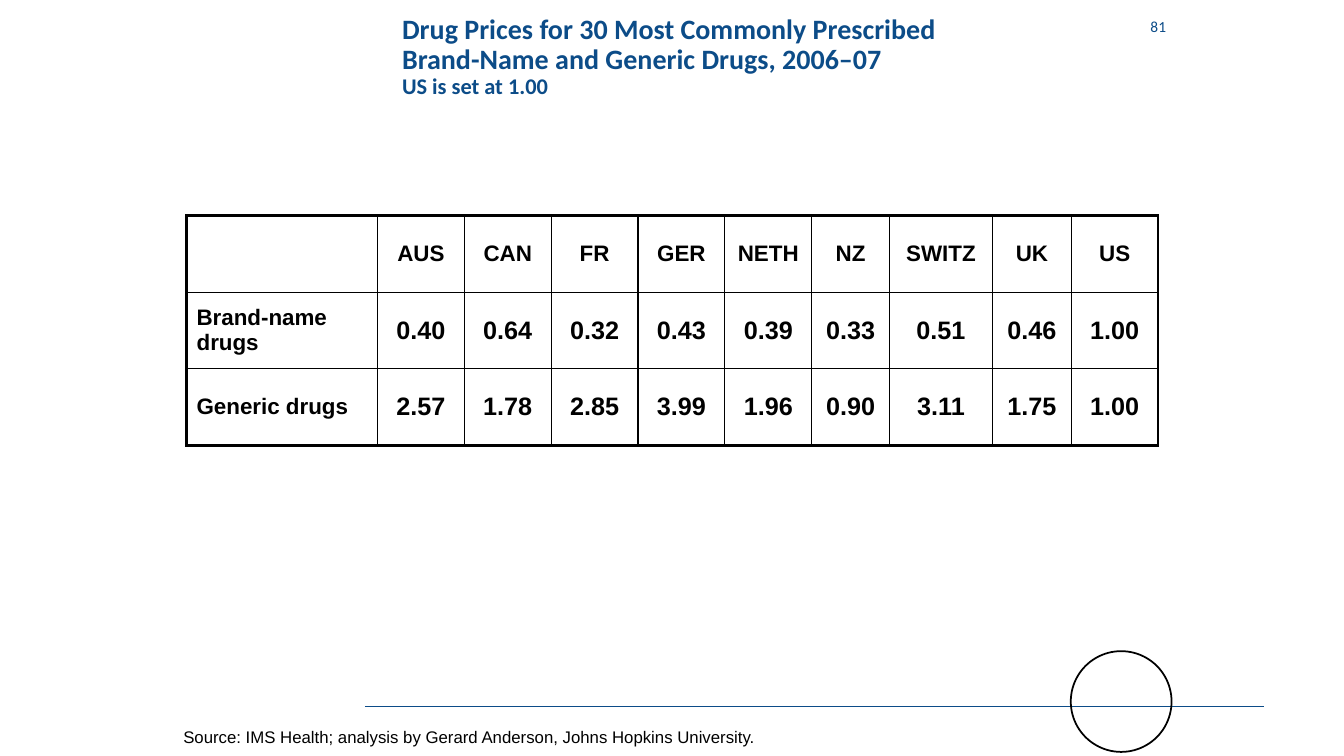
import pptx
import pptx.util
import pptx.dml.color
import pptx.enum.shapes
import pptx.enum.text
import pptx.oxml.ns
import lxml.etree

WIDE, HIGH = 13.33, 7.5
BLUE, BLACK = "0C4C88", "000000"
ALIGN = pptx.enum.text.PP_ALIGN
ANCHOR = pptx.enum.text.MSO_ANCHOR

# Column widths as parts of the table's width
PARTS = [189, 86, 86, 86, 86, 86, 77, 102, 78, 86]
ROWS = [
    ["", "AUS", "CAN", "FR", "GER", "NETH", "NZ", "SWITZ", "UK", "US"],
    ["Brand-name drugs", "0.40", "0.64", "0.32", "0.43", "0.39", "0.33",
     "0.51", "0.46", "1.00"],
    ["Generic drugs", "2.57", "1.78", "2.85", "3.99", "1.96", "0.90",
     "3.11", "1.75", "1.00"],
]


def color(code):
    return pptx.dml.color.RGBColor.from_string(code)


def across(share):
    """Percent of the slide's width."""
    return pptx.util.Inches(WIDE * share / 100)


def down(share):
    """Percent of the slide's height."""
    return pptx.util.Inches(HIGH * share / 100)


def place(left, top, width, height):
    return across(left), down(top), across(width), down(height)


def write(para, text, size, face, tint, bold=False):
    run = para.add_run()
    run.text = text
    font = run.font
    font.size, font.name, font.bold = pptx.util.Pt(size), face, bold
    font.color.rgb = color(tint)


def label(slide, area, lines, face, tint, bold=False, align=ALIGN.LEFT,
          anchor=ANCHOR.TOP, space=1.0):
    frame = slide.shapes.add_textbox(*place(*area)).text_frame
    frame.word_wrap = True
    frame.vertical_anchor = anchor
    for num, (text, size) in enumerate(lines):
        para = frame.add_paragraph() if num else frame.paragraphs[0]
        para.alignment, para.line_spacing = align, space
        write(para, text, size, face, tint, bold)


def rule(slide, left, right, top):
    kind = pptx.enum.shapes.MSO_CONNECTOR.STRAIGHT
    line = slide.shapes.add_connector(
        kind, across(left), down(top), across(right), down(top))
    line.line.color.rgb = color(BLUE)
    line.line.width = pptx.util.Pt(0.5)
    props = line._element.spPr
    lxml.etree.SubElement(props, pptx.oxml.ns.qn("a:effectLst"))


def ring(slide, area):
    kind = pptx.enum.shapes.MSO_SHAPE.OVAL
    disc = slide.shapes.add_shape(kind, *place(*area))
    disc.shadow.inherit = False
    disc.fill.background()
    disc.line.color.rgb = color(BLACK)
    disc.line.width = pptx.util.Pt(1.25)


def border(cell, outer):
    """Draw four edges; those named in outer are heavy."""
    props = cell._tc.get_or_add_tcPr()
    for side in "LRTB":
        width = pptx.util.Pt(2.25 if side in outer else 1)
        edge = lxml.etree.SubElement(
            props, pptx.oxml.ns.qn("a:ln" + side), w=str(int(width)))
        fill = lxml.etree.SubElement(edge, pptx.oxml.ns.qn("a:solidFill"))
        lxml.etree.SubElement(fill, pptx.oxml.ns.qn("a:srgbClr"), val=BLACK)


def grid(slide, area):
    width, height = area[2:]
    table = slide.shapes.add_table(
        len(ROWS), len(PARTS), *place(*area)).table
    table.first_row = table.horz_banding = False
    for col, part in zip(table.columns, PARTS):
        col.width = across(width * part / sum(PARTS))
    last = len(ROWS) - 1, len(PARTS) - 1
    for r, row in enumerate(ROWS):
        table.rows[r].height = down(height / len(ROWS))
        for c, text in enumerate(row):
            cell = table.cell(r, c)
            outer = [side for side, edge in zip(
                "LRTB", (c == 0, c == last[1], r == 0, r == last[0])) if edge]
            border(cell, outer)
            cell.fill.background()
            cell.vertical_anchor = ANCHOR.MIDDLE
            if text:
                para = cell.text_frame.paragraphs[0]
                para.alignment = ALIGN.CENTER if c else ALIGN.LEFT
                size = 18 if r and c else 16
                write(para, text, size, "Arial", BLACK, True)


def main():
    deck = pptx.Presentation()
    deck.slide_width, deck.slide_height = across(100), down(100)
    slide = deck.slides.add_slide(deck.slide_layouts[6])

    # Footer rule and heading
    rule(slide, 27.16, 94.07, 93.47)
    label(slide, (29.18, 1.33, 58.36, 14.67), [
        ("Drug Prices for 30 Most Commonly Prescribed", 20),
        ("Brand-Name and Generic Drugs, 2006–07", 20),
        ("US is set at 1.00", 16),
    ], "Calibri", BLUE, bold=True, space=0.9)

    # Source note
    label(slide, (12.9, 95.47, 47.8, 4), [
        ("Source: IMS Health; analysis by Gerard Anderson, "
         "Johns Hopkins University.", 12)], "Arial", BLACK)

    # Price table
    grid(slide, (13.88, 28.53, 72.3, 30.4))

    # Page number and emblem ring
    label(slide, (70, 0, 17.5, 6.93), [("81", 11)], "Calibri", BLUE,
          align=ALIGN.RIGHT, anchor=ANCHOR.MIDDLE)
    ring(slide, (79.67, 86.13, 7.5, 13.33))

    deck.save("out.pptx")


if __name__ == "__main__":
    main()
